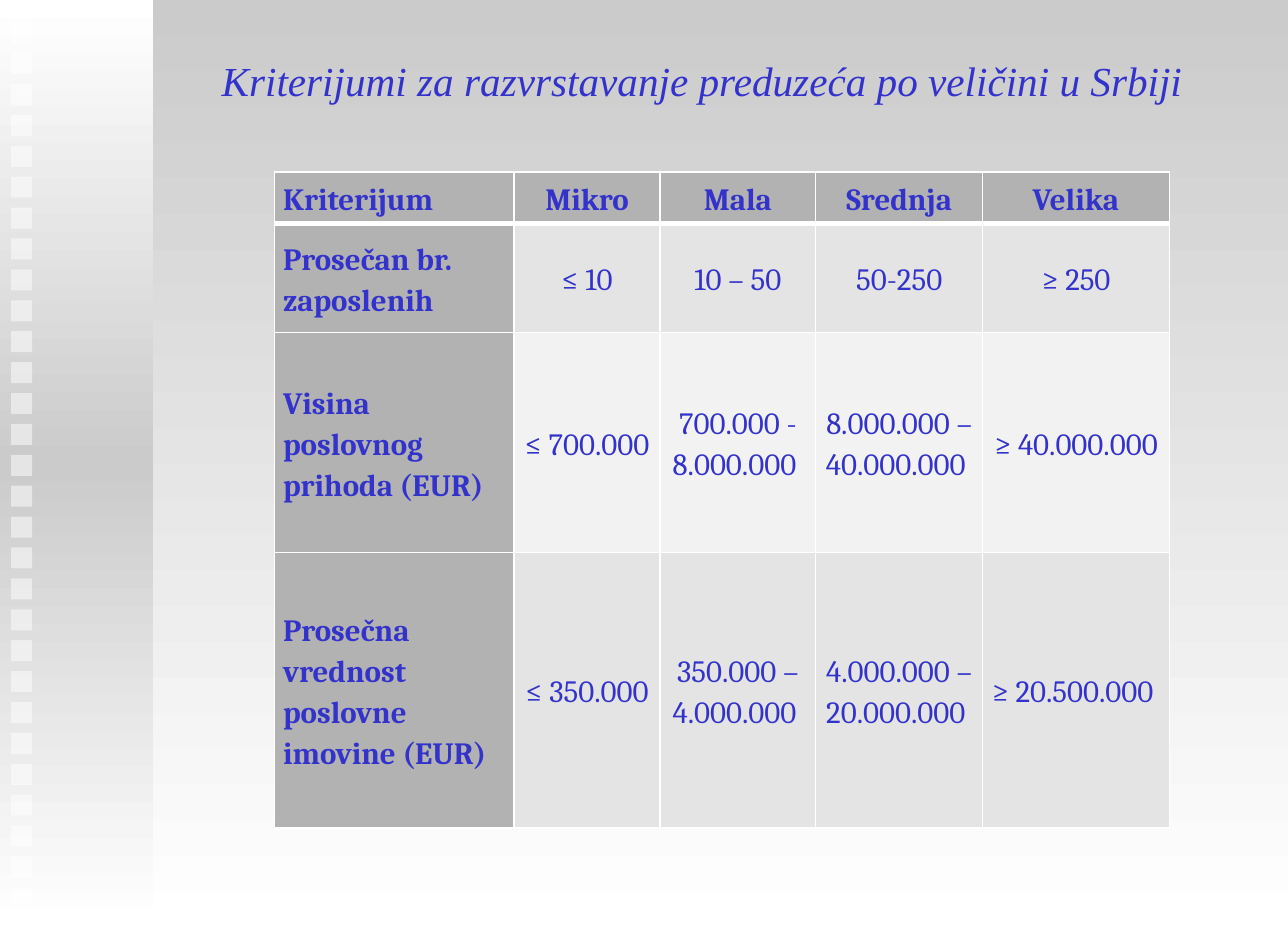
from copy import deepcopy
from lxml.etree import SubElement
from pptx import Presentation
from pptx.dml.color import RGBColor
from pptx.enum.shapes import MSO_SHAPE
from pptx.enum.text import MSO_ANCHOR, PP_ALIGN
from pptx.oxml.ns import qn
from pptx.util import Pt

PX = 9144  # 100 px to the inch
BLUE, WHITE, GREY, DARK = "3333CC", "FFFFFF", "CBCBCB", "B2B2B2"


def tint(color, code):
    color.rgb = RGBColor.from_string(code)


def put(item, form):
    for name, value in form.items():
        setattr(item, name, value)


deck = Presentation()
put(deck, {"slide_width": 1042 * PX, "slide_height": 750 * PX})
slide = deck.slides.add_slide(deck.slide_layouts[5])

# Background
back = slide.background.fill
back.gradient()
back.gradient_angle = 270
for stop, code in zip(back.gradient_stops, (GREY, WHITE)):
    tint(stop.color, code)

# Side band
band = slide.shapes.add_shape(MSO_SHAPE.RECTANGLE, 0, 0, 124 * PX, 750 * PX)
band.shadow.inherit = False
band.line.fill.background()
band.fill.gradient()
band.fill.gradient_angle = 270
stops = band._element.find(".//" + qn("a:gsLst"))
stops.insert(1, deepcopy(stops[0]))
for stop, code, pos in zip(band.fill.gradient_stops, (WHITE, GREY, WHITE), (0, 0.5, 1)):
    tint(stop.color, code)
    stop.position = pos

# Column of small squares
for num in range(29):
    box = slide.shapes.add_shape(
        MSO_SHAPE.RECTANGLE, 9 * PX, (18 + 25 * num) * PX, 17 * PX, 17 * PX)
    box.shadow.inherit = False
    box.line.fill.background()
    box.fill.solid()
    tint(box.fill.fore_color, WHITE)
    shade = box._element.spPr.find(".//" + qn("a:srgbClr"))
    SubElement(shade, qn("a:alpha"), val="50000")

# Title
title = slide.shapes.title
put(title, {"left": 127 * PX, "top": 21 * PX, "width": 882 * PX, "height": 87 * PX})
put(title.text_frame, {"text": "Kriterijumi za razvrstavanje preduzeća po veličini u Srbiji",
                       "vertical_anchor": MSO_ANCHOR.MIDDLE, "word_wrap": True})
line = title.text_frame.paragraphs[0]
line.alignment = PP_ALIGN.CENTER
font = line.runs[0].font
put(font, {"name": "Times New Roman", "size": Pt(24), "italic": True, "bold": False})
tint(font.color, BLUE)

# Table
data = [
    ["Kriterijum", "Mikro", "Mala", "Srednja", "Velika"],
    ["Prosečan br. zaposlenih", "≤ 10", "10 – 50", "50-250", "≥ 250"],
    ["Visina poslovnog prihoda (EUR)", "≤ 700.000 ", "700.000 - 8.000.000 ",
     "8.000.000 – 40.000.000 ", "≥ 40.000.000 "],
    ["Prosečna vrednost poslovne imovine (EUR)", "≤ 350.000 ", "350.000 – 4.000.000 ",
     "4.000.000 – 20.000.000 ", "≥ 20.500.000 "],
]
wide = [194, 118, 126, 135, 151]
high = [42, 88, 178, 223]
fills = [DARK, "E4E4E4", "F2F2F2", "E4E4E4"]
table = slide.shapes.add_table(
    len(high), len(wide), 222 * PX, 139 * PX, sum(wide) * PX, sum(high) * PX).table
put(table, {"first_row": False, "horz_banding": False})
for col, size in zip(table.columns, wide):
    col.width = size * PX
for row, size in zip(table.rows, high):
    row.height = size * PX

# Cells
frame = {"margin_left": 7 * PX, "margin_right": 7 * PX, "margin_top": 0,
         "margin_bottom": 0, "vertical_anchor": MSO_ANCHOR.MIDDLE}
for r, texts in enumerate(data):
    for c, text in enumerate(texts):
        cell = table.cell(r, c)
        put(cell, {"text": text, **frame})
        head = r == 0 or c == 0

        # Borders, thick below the header
        for side in "LRTB":
            thick = (r, side) in ((0, "B"), (1, "T"))
            edge = SubElement(cell._tc.get_or_add_tcPr(), qn("a:ln" + side),
                              w=str(Pt(3 if thick else 1)))
            SubElement(SubElement(edge, qn("a:solidFill")), qn("a:srgbClr"), val=WHITE)
        cell.fill.solid()
        tint(cell.fill.fore_color, DARK if head else fills[r])

        line = cell.text_frame.paragraphs[0]
        put(line, {"line_spacing": 1.15,
                   "alignment": PP_ALIGN.CENTER if c else PP_ALIGN.LEFT})
        font = line.runs[0].font
        put(font, {"name": "Cambria", "size": Pt(18), "bold": head})
        tint(font.color, BLUE)

deck.save("out.pptx")
